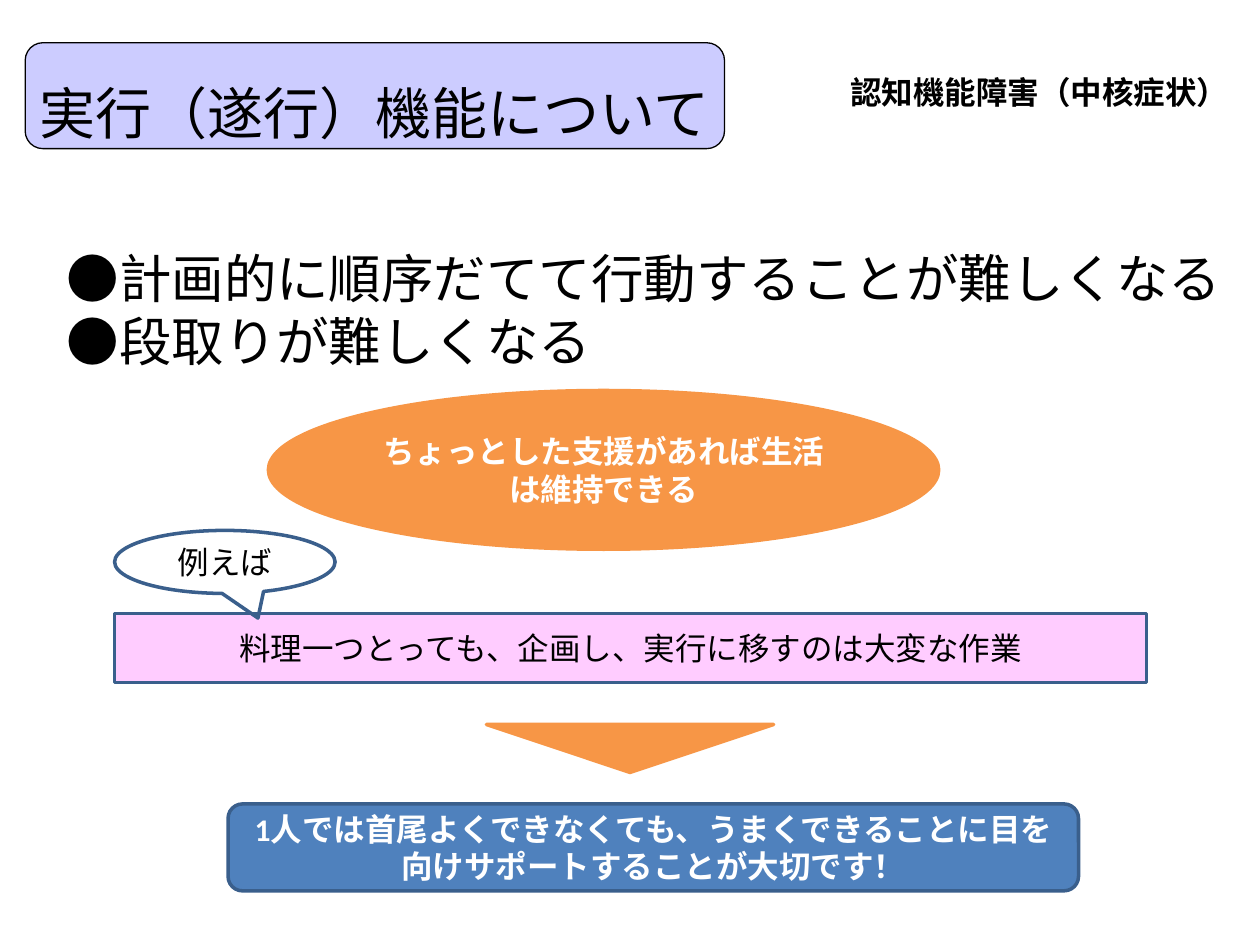
from pptx import Presentation
from pptx.dml.color import RGBColor
from pptx.enum.shapes import MSO_SHAPE as Shape
from pptx.enum.text import MSO_ANCHOR as Anchor, PP_ALIGN as Align
from pptx.util import Inches, Pt

WIDTH, HEIGHT = Inches(10), Inches(7.5)
COLORS = {
    "black": "000000", "white": "FFFFFF", "lavender": "CCCCFF", "pink": "FFCCFF",
    "orange": "F79646", "blue": "4F81BD", "navy": "3A5F8C",
}


def rgb(name):
    """Return the named colour."""
    return RGBColor.from_string(COLORS[name])


def place(x, y, w, h):
    """Turn percentages of the slide into lengths."""
    return [int(size * share / 100)
            for size, share in ((WIDTH, x), (HEIGHT, y), (WIDTH, w), (HEIGHT, h))]


def write(s, lines, color="black", size=18, font="Calibri", bold=False, align=Align.LEFT):
    """Write one paragraph per line and return the text frame."""
    tf = s.text_frame
    tf.word_wrap = True
    for i, line in enumerate(lines):
        p = tf.paragraphs[0] if i == 0 else tf.add_paragraph()
        p.text, p.alignment = line, align
        p.font.name, p.font.size, p.font.bold = font, Pt(size), bold
        p.font.color.rgb = rgb(color)
    return tf


def add_text(slide, box, lines, **style):
    """Add a text box."""
    return write(slide.shapes.add_textbox(*place(*box)), lines, **style)


def add_shape(slide, kind, box, fill, line, weight=2, text=None, **style):
    """Add a preset shape with centred text."""
    s = slide.shapes.add_shape(kind, *place(*box))
    s.shadow.inherit = False
    if fill:
        s.fill.solid()
        s.fill.fore_color.rgb = rgb(fill)
    else:
        s.fill.background()
    s.line.color.rgb, s.line.width = rgb(line), Pt(weight)
    if text:
        write(s, [text], align=Align.CENTER, **style).vertical_anchor = Anchor.MIDDLE
    return s


def add_title(slide):
    """Add the title panel and the topic label."""
    s = add_shape(slide, Shape.ROUNDED_RECTANGLE, (2, 4.53, 55.5, 11.2), "lavender", "black",
                  0.75, "実行（遂行）機能について", size=32, font="Arial")
    s.text_frame.word_wrap = False
    s.text_frame.paragraphs[0].line_spacing = 1.5
    add_text(slide, (66.5, 7.07, 35, 5.33), ["認知機能障害（中核症状）"], bold=True)


def add_symptoms(slide):
    """Add the hanging list of symptoms."""
    tf = add_text(slide, (4.3, 25.33, 94.1, 14.8),
                  ["●計画的に順序だてて行動することが難しくなる", "●段取りが難しくなる"],
                  size=30, font="Noto Sans CJK JP")
    for p in tf.paragraphs:
        pPr = p._p.get_or_add_pPr()
        pPr.set("marL", str(Inches(0.29)))
        pPr.set("indent", str(-Inches(0.29)))


def add_example(slide):
    """Add the cooking example with its callout."""
    add_shape(slide, Shape.RECTANGLE, (9.1, 64.93, 81.9, 7.33), "pink", "navy",
              text="料理一つとっても、企画し、実行に移すのは大変な作業")
    s = add_shape(slide, Shape.OVAL_CALLOUT, (9.1, 56.13, 17.5, 6.67), None, "navy",
                  text="例えば")
    s.adjustments[0], s.adjustments[1] = 0.15, 0.89


def main():
    """Build the slide and save it."""
    prs = Presentation()
    prs.slide_width, prs.slide_height = WIDTH, HEIGHT
    slide = prs.slides.add_slide(prs.slide_layouts[6])
    add_title(slide)
    add_symptoms(slide)
    add_shape(slide, Shape.OVAL, (21.3, 41.33, 53.2, 16.8), "orange", "orange",
              text="ちょっとした支援があれば生活は維持できる", color="white", bold=True)
    add_example(slide)
    add_shape(slide, Shape.ISOSCELES_TRIANGLE, (38.6, 76.67, 22.8, 5.07),
              "orange", "orange").rotation = 180
    add_shape(slide, Shape.ROUNDED_RECTANGLE, (18.1, 85.07, 67.5, 9.2), "blue", "navy",
              text="1人では首尾よくできなくても、うまくできることに目を向けサポートすることが大切です！",
              color="white", bold=True)
    prs.save("out.pptx")


if __name__ == "__main__":
    main()
